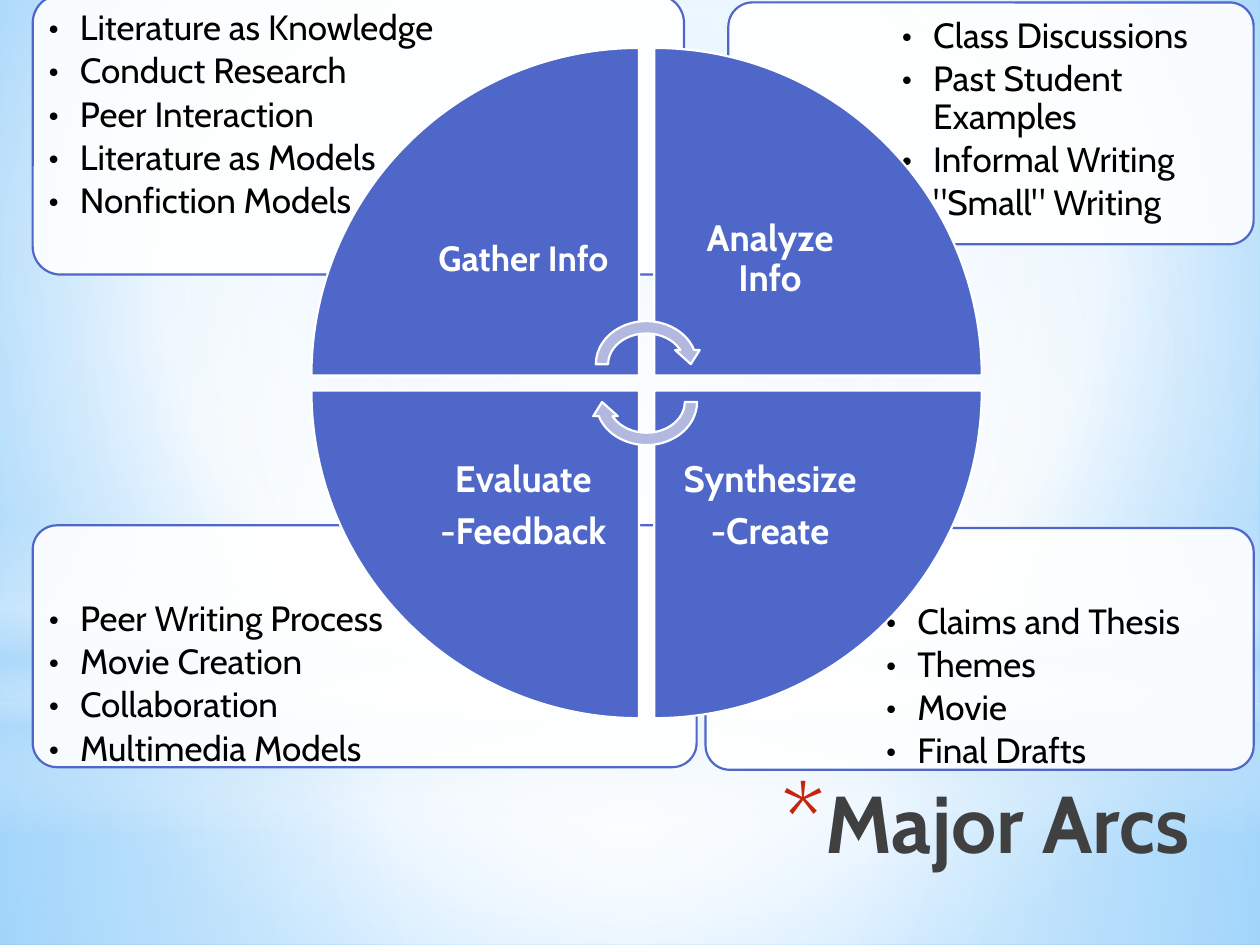
from lxml import etree
from pptx import Presentation
from pptx.dml.color import RGBColor
from pptx.enum import shapes, text
from pptx.oxml import ns
from pptx.util import Pt

FONT, BLUE, WHITE, SKY = "Cabin", "4E67C8", "FFFFFF", "B4DCFA"
rgb = RGBColor.from_string
preset = shapes.MSO_SHAPE


def gradient(fill, element, stops, focus=None):
    """Circular gradient round focus (l, t, r, b in %), else top to bottom."""
    fill.gradient()
    grad = element.find(".//" + ns.qn("a:gradFill"))
    for child in list(grad):
        grad.remove(child)
    stop_list = etree.SubElement(grad, ns.qn("a:gsLst"))
    for place, colour, alpha in stops:
        stop = etree.SubElement(stop_list, ns.qn("a:gs"), pos=str(place * 1000))
        tone = etree.SubElement(stop, ns.qn("a:srgbClr"), val=colour)
        etree.SubElement(tone, ns.qn("a:alpha"), val=str(alpha * 1000))
    if focus:
        ring = etree.SubElement(grad, ns.qn("a:path"), {"path": "circle"})
        sides = {side: str(v * 1000) for side, v in zip("ltrb", focus)}
        etree.SubElement(ring, ns.qn("a:fillToRect"), sides)
    else:
        etree.SubElement(grad, ns.qn("a:lin"), ang="5400000", scaled="0")


def write(frame, lines, font, paragraph, inset, bullet=None):
    """Fill a text frame; bullet is (character, hang, size in %, colour)."""
    frame.word_wrap = True
    for side in ("left", "top", "right", "bottom"):
        setattr(frame, "margin_" + side, Pt(inset))
    for i, line in enumerate(lines):
        para = frame.paragraphs[0] if i == 0 else frame.add_paragraph()
        for key, value in paragraph.items():
            setattr(para, key, value)
        run = para.add_run()
        run.text = line
        for key, value in font.items():
            if key == "color":
                run.font.color.rgb = rgb(value)
            else:
                setattr(run.font, key, value)
        if bullet:
            mark, hang, size, colour = bullet
            props = para._p.get_or_add_pPr()
            props.set("marL", str(Pt(hang)))
            props.set("indent", str(-Pt(hang)))
            tint = etree.SubElement(props, ns.qn("a:buClr"))
            etree.SubElement(tint, ns.qn("a:srgbClr"), val=colour)
            etree.SubElement(props, ns.qn("a:buSzPct"), val=str(size * 1000))
            etree.SubElement(props, ns.qn("a:buFont"), typeface=FONT)
            etree.SubElement(props, ns.qn("a:buChar"), char=mark)


prs = Presentation()
prs.slide_width, prs.slide_height = Pt(720), Pt(540)
slide = prs.slides.add_slide(prs.slide_layouts[5])

# Sky backdrop
gradient(slide.background.fill, slide.element,
         [(0, "9ED5FF", 100), (60, WHITE, 100), (100, "5BB9FF", 100)], (20, 10, 20, 60))
centre = (50, 50, 50, 50)
for kind, top, height, stops, focus in [
    (preset.RECTANGLE, 401.8, 138.2,
     [(0, WHITE, 91), (37, WHITE, 76), (100, SKY, 79)], centre),
    (preset.RECTANGLE, 0, 401.8,
     [(0, WHITE, 89), (48, WHITE, 62), (100, SKY, 79)], centre),
    (preset.RECTANGLE, 296.6, 180,
     [(0, WHITE, 0), (29, WHITE, 30), (45, SKY, 40),
      (55, WHITE, 26), (65, SKY, 60), (100, WHITE, 0)], None),
    (preset.OVAL, 126, 401.8, [(0, WHITE, 100), (56, WHITE, 0)], centre),
]:
    haze = slide.shapes.add_shape(kind, 0, Pt(top), Pt(720), Pt(height))
    haze.shadow.inherit = False
    haze.line.fill.background()
    gradient(haze.fill, haze._element, stops, focus)

# Title, brought in front of the backdrop
title = slide.shapes.title
title._element.getparent().append(title._element)
title.left, title.top, title.width, title.height = Pt(174.2), Pt(437.8), Pt(512.6), Pt(90)
title.text_frame.vertical_anchor = text.MSO_ANCHOR.TOP
write(title.text_frame, ["Major Arcs"],
      {"size": Pt(46), "name": FONT, "bold": True, "color": "404040"},
      {"alignment": text.PP_ALIGN.RIGHT}, 4, ("*", 25.2, 128, "C3260C"))
title.text_frame.margin_right = Pt(7.2)

# Corner cards: the list takes 70% by 75% of the card, at its outer corner
PAD = 3
for x, y, w, h, right, bottom, items in [
    (403.2, 301.7, 313.2, 138.2, True, True,
     ["Claims and Thesis", "Themes", "Movie", "Final Drafts"]),
    (18.7, 300.2, 379.4, 138.2, False, True,
     ["Peer Writing Process", "Movie Creation", "Collaboration", "Multimedia Models"]),
    (416.2, 1.4, 300.2, 138.2, True, False,
     ["Class Discussions", "Past Student Examples", "Informal Writing", '"Small" Writing']),
    (18.7, -2.9, 372.2, 159.8, False, False,
     ["Literature as Knowledge", "Conduct Research", "Peer Interaction",
      "Literature as Models", "Nonfiction Models"]),
]:
    card = slide.shapes.add_shape(preset.ROUNDED_RECTANGLE, Pt(x), Pt(y), Pt(w), Pt(h))
    card.adjustments[0] = 0.1
    card.shadow.inherit = False
    card.fill.solid()
    card.fill.fore_color.rgb = rgb(WHITE)
    tone = card._element.spPr.find(ns.qn("a:solidFill"))[0]
    etree.SubElement(tone, ns.qn("a:alpha"), val="90000")
    card.line.color.rgb = rgb(BLUE)
    card.line.width = Pt(1.25)
    points = slide.shapes.add_textbox(
        Pt(x + PAD + 0.3 * w * right), Pt(y + PAD + 0.25 * h * bottom),
        Pt(0.7 * w - 2 * PAD), Pt(0.75 * h - 2 * PAD))
    write(points.text_frame, items, {"size": Pt(20), "name": FONT, "color": "000000"},
          {"line_spacing": 0.9, "space_after": Pt(3)}, 6, ("•", 18, 100, "000000"))

# Wheel: four wedges, each with a label square at its inner corner
WHEEL_X, WHEEL_Y, WEDGE, PITCH, LABEL = 178, 27.4, 187.2, 195.8, 132.4
for turn, (column, row, size, lines) in enumerate([
    (0, 0, 20, ["Gather Info"]),
    (1, 0, 21, ["Analyze Info"]),
    (1, 1, 21, ["Synthesize", "-Create"]),
    (0, 1, 21, ["Evaluate", "-Feedback"]),
]):
    x, y = WHEEL_X + column * PITCH, WHEEL_Y + row * PITCH
    wedge = slide.shapes.add_shape(preset.PIE_WEDGE, Pt(x), Pt(y), Pt(WEDGE), Pt(WEDGE))
    wedge.rotation = 90 * turn
    wedge.shadow.inherit = False
    wedge.fill.solid()
    wedge.fill.fore_color.rgb = rgb(BLUE)
    wedge.line.color.rgb = rgb(WHITE)
    wedge.line.width = Pt(1.25)
    inner = WEDGE - LABEL
    stage = slide.shapes.add_textbox(Pt(x + inner * (1 - column)), Pt(y + inner * (1 - row)),
                                     Pt(LABEL), Pt(LABEL))
    stage.text_frame.vertical_anchor = text.MSO_ANCHOR.MIDDLE
    write(stage.text_frame, lines,
          {"size": Pt(size), "name": FONT, "bold": True, "color": WHITE},
          {"alignment": text.PP_ALIGN.CENTER, "line_spacing": 0.9, "space_after": Pt(7)}, 11.5)

# Cycle arrows at the hub
for y, angle in [(180, 0), (201.6, 180)]:
    arrow = slide.shapes.add_shape(preset.CIRCULAR_ARROW, Pt(337), Pt(y), Pt(64.8), Pt(56.2))
    arrow.rotation = angle
    arrow.shadow.inherit = False
    arrow.fill.solid()
    arrow.fill.fore_color.rgb = rgb("B2B8E0")
    arrow.line.color.rgb = rgb(WHITE)
    arrow.line.width = Pt(1.25)

prs.save("out.pptx")
